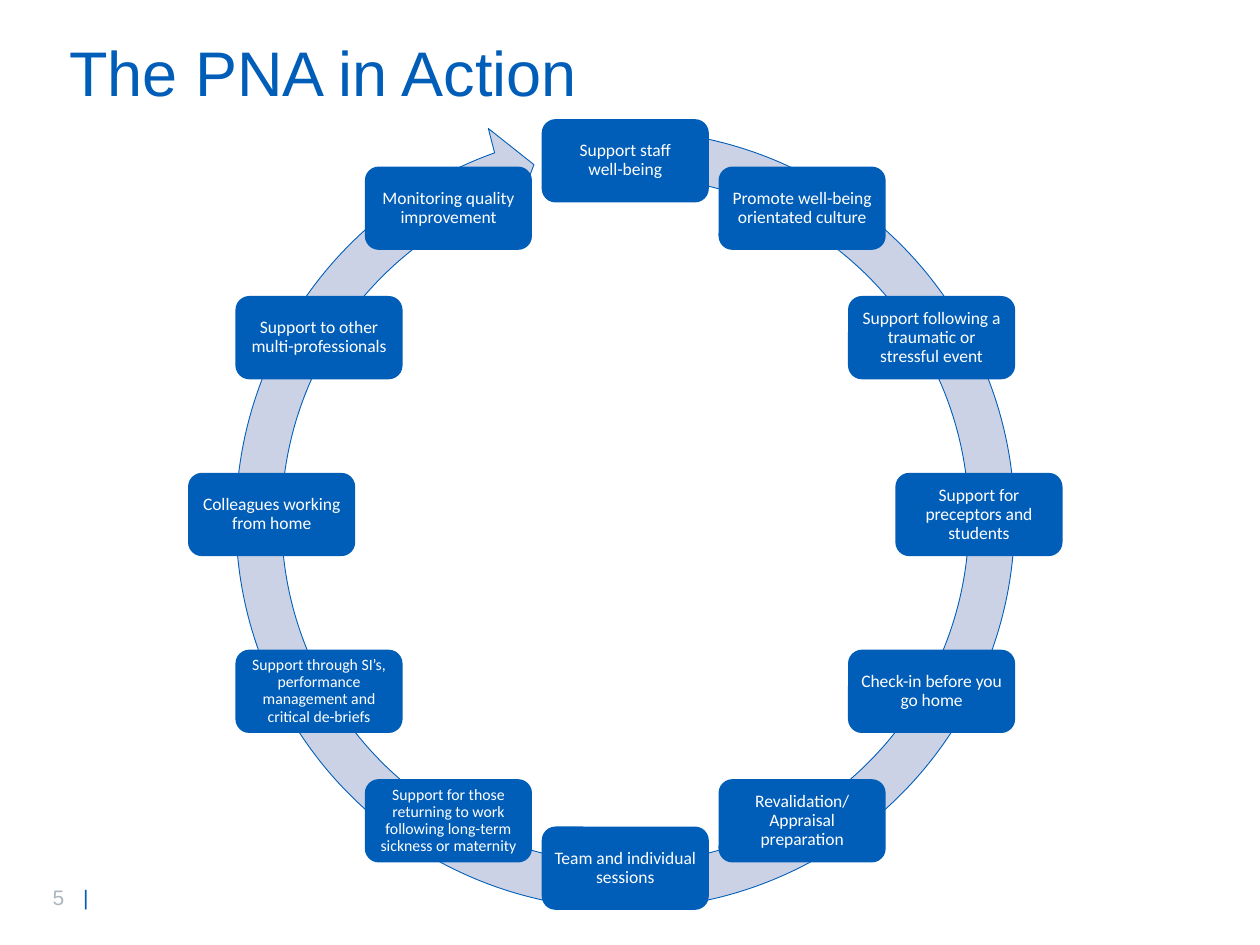
from math import cos, pi, sin
from lxml.etree import SubElement
from pptx import Presentation
from pptx.dml.color import RGBColor
from pptx.enum.shapes import MSO_SHAPE
from pptx.enum.text import MSO_ANCHOR, PP_ALIGN
from pptx.oxml.ns import qn
from pptx.util import Pt

BLUE = RGBColor(0x00, 0x5E, 0xB8)
PALE = RGBColor(0xCC, 0xD2, 0xE6)
GREY = RGBColor(0xAD, 0xB6, 0xBE)
WHITE = RGBColor(0xFF, 0xFF, 0xFF)

TITLE = "The PNA in Action"
NUMBER = [("5", GREY), ("\t|", BLUE)]
STEPS = [
    ("Support staff\vwell-being", 10),
    ("Promote well-being orientated culture", 10),
    ("Support following a traumatic or stressful event", 10),
    ("Support for preceptors and students", 10),
    ("Check-in before you go home", 10),
    ("Revalidation/ Appraisal preparation", 10),
    ("Team and individual sessions", 10),
    ("Support for those returning to work following long-term sickness or maternity", 9),
    ("Support through SI’s, performance management and critical de-briefs", 9),
    ("Colleagues working from home", 10),
    ("Support to other multi-professionals", 10),
    ("Monitoring quality improvement", 10),
]
MID_X, MID_Y, RADIUS = 357.3, 294, 202.1
BOX_W, BOX_H = 95.5, 47.6
RING = 473.8
BENDS = [0.055, 3.307, 150.041, 166.75, 0.058]


def style(font, name, size, color):
    font.name = name
    font.size = Pt(size)
    font.color.rgb = color


def add_title(slide):
    title = slide.shapes.title
    title.left, title.top = Pt(32.4), Pt(19.4)
    title.width, title.height = Pt(517), Pt(48.2)
    frame = title.text_frame
    frame.text = TITLE
    frame.vertical_anchor = MSO_ANCHOR.MIDDLE
    para = frame.paragraphs[0]
    para.alignment = PP_ALIGN.LEFT
    para.line_spacing = 0.9
    style(para.runs[0].font, "Arial", 36, BLUE)


def add_number(slide):
    box = slide.shapes.add_textbox(Pt(23), Pt(501.8), Pt(51), Pt(21.6))
    para = box.text_frame.paragraphs[0]
    tabs = SubElement(para._p.get_or_add_pPr(), qn("a:tabLst"))
    SubElement(tabs, qn("a:tab"), pos=str(Pt(17.5)), algn="l")
    for text, color in NUMBER:
        run = para.add_run()
        run.text = text
        style(run.font, "Arial", 12, color)


def add_ring(slide):
    ring = slide.shapes.add_shape(
        MSO_SHAPE.CIRCULAR_ARROW, Pt(MID_X - RING / 2), Pt(60), Pt(RING), Pt(RING))
    for i, bend in enumerate(BENDS):
        ring.adjustments[i] = bend
    ring.shadow.inherit = False
    ring.fill.solid()
    ring.fill.fore_color.rgb = PALE
    ring.line.color.rgb = BLUE
    ring.line.width = Pt(0.5)


def add_step(slide, text, size, angle):
    left = MID_X + RADIUS * sin(angle) - BOX_W / 2
    top = MID_Y - RADIUS * cos(angle) - BOX_H / 2
    box = slide.shapes.add_shape(
        MSO_SHAPE.ROUNDED_RECTANGLE, Pt(left), Pt(top), Pt(BOX_W), Pt(BOX_H))
    box.shadow.inherit = False
    box.fill.solid()
    box.fill.fore_color.rgb = BLUE
    box.line.fill.background()
    frame = box.text_frame
    frame.text = text
    frame.word_wrap = True
    frame.vertical_anchor = MSO_ANCHOR.MIDDLE
    frame.margin_left = frame.margin_right = Pt(3)
    frame.margin_top = frame.margin_bottom = Pt(3)
    para = frame.paragraphs[0]
    para.alignment = PP_ALIGN.CENTER
    para.line_spacing = 0.9
    for run in para.runs:
        style(run.font, "Calibri", size, WHITE)


def main():
    deck = Presentation()
    deck.slide_width, deck.slide_height = Pt(720), Pt(540)
    slide = deck.slides.add_slide(deck.slide_layouts[5])
    add_number(slide)
    add_title(slide)
    add_ring(slide)
    for i, (text, size) in enumerate(STEPS):
        add_step(slide, text, size, 2 * pi * i / len(STEPS))
    deck.save("out.pptx")


if __name__ == "__main__":
    main()
